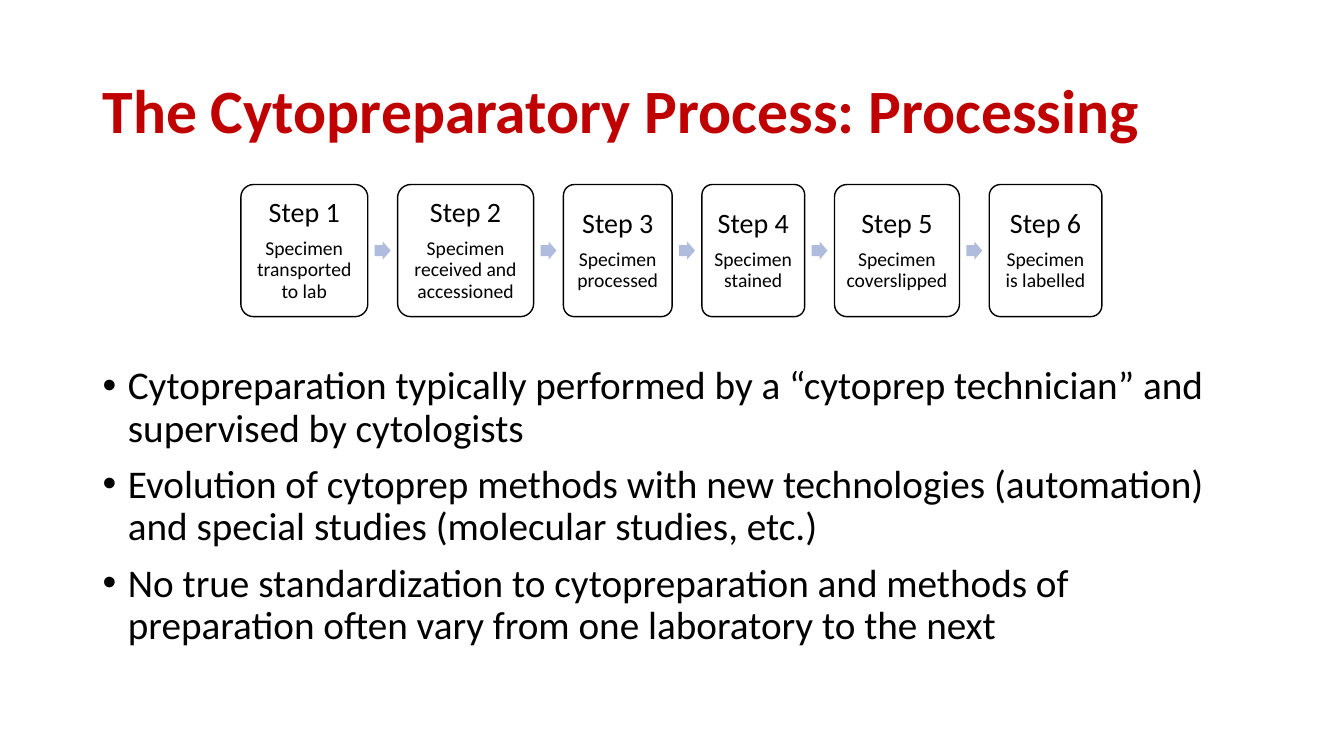
import pptx
import pptx.util
import pptx.dml.color
import pptx.enum.shapes
import pptx.enum.text
from pptx.util import Cm, Pt

RGBColor = pptx.dml.color.RGBColor
PP_ALIGN = pptx.enum.text.PP_ALIGN
MSO_ANCHOR = pptx.enum.text.MSO_ANCHOR
MSO_SHAPE = pptx.enum.shapes.MSO_SHAPE

RED = RGBColor(0xC0, 0x00, 0x00)
BLACK = RGBColor(0x00, 0x00, 0x00)
WHITE = RGBColor(0xFF, 0xFF, 0xFF)
ARROW_BLUE = RGBColor(0xB0, 0xBC, 0xDE)
FONT = "Calibri"

STEP_LEFT, STEP_TOP, STEP_HEIGHT, STEP_GAP = 6.07, 4.65, 3.33, 0.75
ARROW_WIDTH, ARROW_HEIGHT = 0.4, 0.46
STEPS = [
    ("Specimen transported to lab", 3.2),
    ("Specimen received and accessioned", 3.43),
    ("Specimen processed", 2.74),
    ("Specimen stained", 2.59),
    ("Specimen coverslipped", 3.15),
    ("Specimen is labelled", 2.84),
]
BULLETS = [
    "Cytopreparation typically performed by a “cytoprep technician” and supervised by cytologists",
    "Evolution of cytoprep methods with new technologies (automation) and special studies (molecular studies, etc.)",
    "No true standardization to cytopreparation and methods of preparation often vary from one laboratory to the next",
]


def add_text(tf, text, *, size, color=BLACK, bold=False, align=PP_ALIGN.LEFT,
             before=0, after=0, hanging=None):
    p = tf.paragraphs[0] if not tf.text else tf.add_paragraph()
    if hanging is not None:
        pPr = p._p.get_or_add_pPr()
        pPr.set("marL", str(hanging))
        pPr.set("indent", str(-hanging))
    p.alignment = align
    p.line_spacing = 0.9
    p.space_before, p.space_after = Pt(before), Pt(after)
    r = p.add_run()
    r.text = text
    r.font.name = FONT
    r.font.size = Pt(size)
    r.font.bold = bold
    r.font.color.rgb = color


def place(sp, left, top, width, height, anchor):
    sp.left, sp.top, sp.width, sp.height = Cm(left), Cm(top), Cm(width), Cm(height)
    tf = sp.text_frame
    tf.word_wrap = True
    tf.auto_size = pptx.enum.text.MSO_AUTO_SIZE.NONE
    tf.vertical_anchor = anchor
    return tf


def add_shape(s, kind, left, top, width, height, fill):
    sp = s.shapes.add_shape(kind, Cm(left), Cm(top), Cm(width), Cm(height))
    sp.shadow.inherit = False
    sp.fill.solid()
    sp.fill.fore_color.rgb = fill
    sp.line.fill.background()
    return sp


def add_step(s, number, text, left, width):
    sp = add_shape(s, MSO_SHAPE.ROUNDED_RECTANGLE, left, STEP_TOP, width, STEP_HEIGHT, WHITE)
    sp.adjustments[0] = 0.1
    sp.line.color.rgb = BLACK
    sp.line.width = Pt(1)
    tf = sp.text_frame
    tf.word_wrap = True
    tf.vertical_anchor = MSO_ANCHOR.MIDDLE
    tf.margin_left = tf.margin_right = tf.margin_top = tf.margin_bottom = Cm(0.19)
    add_text(tf, f"Step {number}", size=20, align=PP_ALIGN.CENTER, after=7)
    add_text(tf, text, size=14, align=PP_ALIGN.CENTER)


def add_arrow(s, left):
    top = STEP_TOP + (STEP_HEIGHT - ARROW_HEIGHT) / 2
    sp = add_shape(s, MSO_SHAPE.RIGHT_ARROW, left, top, ARROW_WIDTH, ARROW_HEIGHT, ARROW_BLUE)
    sp.adjustments[0] = 0.6


def add_process(s):
    left = STEP_LEFT
    for number, (text, width) in enumerate(STEPS, 1):
        add_step(s, number, text, left, width)
        left += width
        if number < len(STEPS):
            add_arrow(s, left + (STEP_GAP - ARROW_WIDTH) / 2)
        left += STEP_GAP


def main():
    prs = pptx.Presentation()
    prs.slide_width, prs.slide_height = Cm(33.87), Cm(19.05)
    s = prs.slides.add_slide(prs.slide_layouts[1])

    tf = place(s.shapes.title, 2.33, 1.02, 29.21, 3.68, MSO_ANCHOR.MIDDLE)
    add_text(tf, "The Cytopreparatory Process: Processing", size=44, color=RED, bold=True)

    tf = place(s.placeholders[1], 2.33, 9.09, 29.21, 7.42, MSO_ANCHOR.TOP)
    for i, text in enumerate(BULLETS):
        add_text(tf, text, size=28, before=10 if i else 0, hanging=Cm(0.64))

    add_process(s)
    prs.save("out.pptx")


if __name__ == "__main__":
    main()
